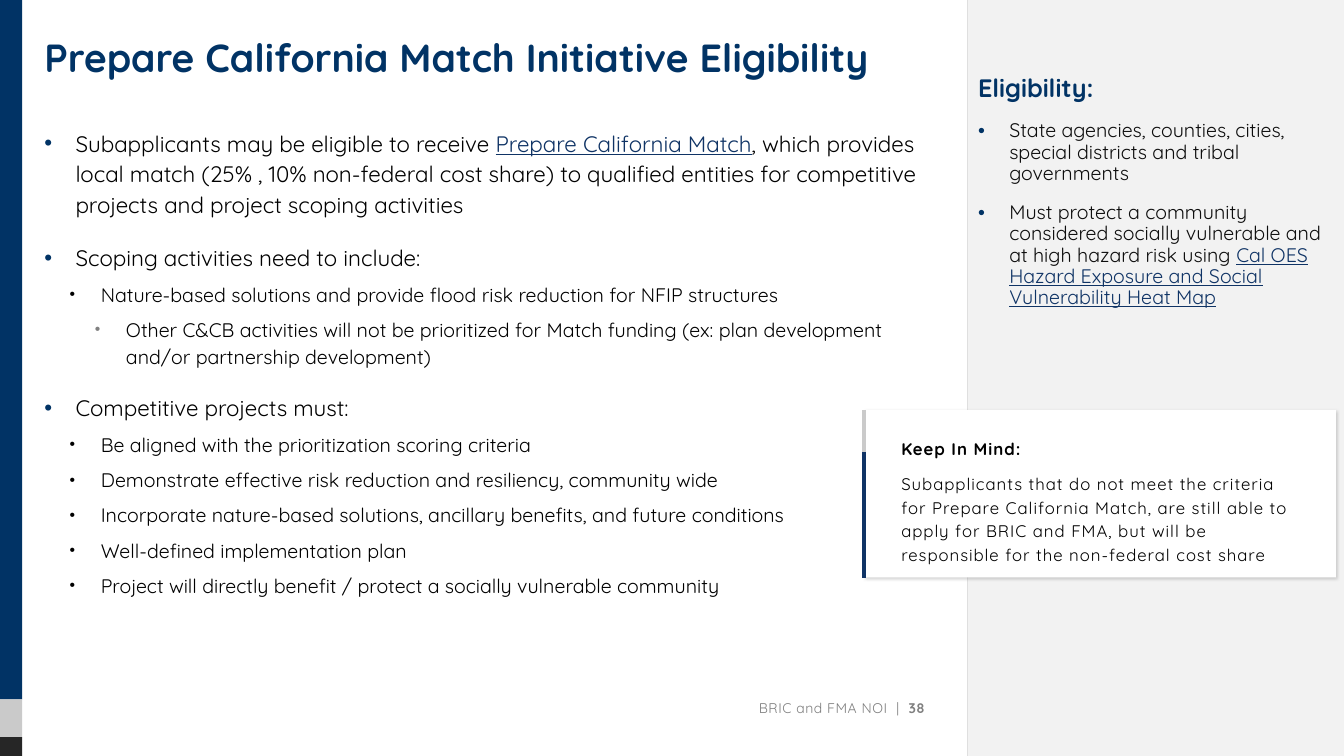
from dataclasses import dataclass

from lxml import etree
from pptx import Presentation
from pptx import util as u
from pptx.dml.color import RGBColor
from pptx.enum import shapes, text
from pptx.oxml import ns


@dataclass(frozen=True)
class Theme:
    font: str = "Quicksand"
    navy: str = "013365"
    link: str = "0F3365"
    silver: str = "CACACA"
    charcoal: str = "262626"
    panel: str = "F2F2F2"
    rule: str = "DFDFDF"
    muted: str = "7F7F7F"
    bullet_muted: str = "808080"
    shadow: str = "595959"
    ink: str = "000000"
    ink_soft: str = "0D0D0D"
    white: str = "FFFFFF"
    title: int = 28
    heading: int = 18
    lead: int = 16
    body: int = 14
    note: int = 12
    footer: int = 10


class SlideBuilder:
    """Draws on one slide; every box is (left, top, width, height) in percent of the slide."""

    def __init__(self, prs, layout, theme):
        self.prs, self.theme = prs, theme
        self.s = prs.slides.add_slide(layout)

    def x(self, share):
        return round(self.prs.slide_width * share / 100)

    def y(self, share):
        return round(self.prs.slide_height * share / 100)

    def box(self, left, top, width, height):
        return self.x(left), self.y(top), self.x(width), self.y(height)

    def rect(self, area, color):
        sp = self.s.shapes.add_shape(shapes.MSO_SHAPE.RECTANGLE, *self.box(*area))
        sp.shadow.inherit = False
        sp.fill.solid()
        sp.fill.fore_color.rgb = RGBColor.from_string(color)
        sp.line.fill.background()
        return sp

    def card(self, area):
        """White rectangle with a soft shadow; returns its text frame."""
        sp = self.rect(area, self.theme.white)
        effects = sp._element.spPr.find(ns.qn("a:effectLst"))
        shadow = etree.SubElement(effects, ns.qn("a:outerShdw"), blurRad=str(u.Pt(2)),
                                  dist=str(u.Pt(1)), dir=str(45 * 60000))
        color = etree.SubElement(shadow, ns.qn("a:srgbClr"), val=self.theme.shadow)
        etree.SubElement(color, ns.qn("a:alpha"), val="25000")
        return self.frame(sp, insets=(0.25, 0.25, 0.35, 0.25))

    def vline(self, x, top, bottom, color, weight):
        line = self.s.shapes.add_connector(shapes.MSO_CONNECTOR.STRAIGHT, self.x(x),
                                           self.y(bottom), self.x(x), self.y(top))
        line.line.color.rgb = RGBColor.from_string(color)
        line.line.width = u.Pt(weight)
        etree.SubElement(line._element.spPr, ns.qn("a:effectLst"))

    def frame(self, sp, insets=(0, 0.05, 0, 0.05), anchor=text.MSO_ANCHOR.TOP):
        tf = sp.text_frame
        tf.word_wrap = True
        tf.auto_size = text.MSO_AUTO_SIZE.NONE
        tf.vertical_anchor = anchor
        tf.margin_left, tf.margin_top, tf.margin_right, tf.margin_bottom = map(u.Inches, insets)
        return tf

    def placeholder(self, index, area):
        """Move a template placeholder in front of what is drawn so far."""
        sp = self.s.placeholders[index]
        sp.left, sp.top, sp.width, sp.height = self.box(*area)
        self.s.shapes._spTree.append(sp._element)
        return self.frame(sp)

    def textbox(self, area):
        sp = self.s.shapes.add_textbox(*self.box(*area))
        return self.frame(sp, anchor=text.MSO_ANCHOR.MIDDLE)

    def para(self, tf, runs, size, color, level=0, bullet=None, bullet_size=100, margin=0,
             spacing=1.0, before=0, after=0, align=text.PP_ALIGN.LEFT, tracking=0):
        """Add a paragraph; runs are (words, kind), kind being "", "bold" or "link"."""
        first = not tf.paragraphs[0].runs
        p = tf.paragraphs[0] if first else tf.add_paragraph()
        p.level = level
        pPr = p._p.get_or_add_pPr()
        pPr.set("marL", str(u.Inches(margin)))
        pPr.set("indent", str(u.Inches(-0.31 if bullet else 0)))
        if bullet:
            clr = etree.SubElement(pPr, ns.qn("a:buClr"))
            etree.SubElement(clr, ns.qn("a:srgbClr"), val=bullet)
            etree.SubElement(pPr, ns.qn("a:buSzPct"), val=str(bullet_size * 1000))
            etree.SubElement(pPr, ns.qn("a:buFont"), typeface="Arial")
            etree.SubElement(pPr, ns.qn("a:buChar"), char="•")
        else:
            etree.SubElement(pPr, ns.qn("a:buNone"))
        p.alignment = align
        p.line_spacing = spacing
        p.space_before = u.Pt(0 if first else before)
        p.space_after = u.Pt(after)
        for words, kind in runs:
            r = p.add_run()
            r.text = words
            r.font.name, r.font.size = self.theme.font, u.Pt(size)
            r.font.bold = kind == "bold"
            r.font.underline = kind == "link"
            r.font.color.rgb = RGBColor.from_string(self.theme.link if kind == "link" else color)
            if tracking:
                r._r.get_or_add_rPr().set("spc", str(round(tracking * 100)))


def main():
    t = Theme()
    prs = Presentation()
    prs.slide_width, prs.slide_height = u.Inches(13.33), u.Inches(7.5)
    b = SlideBuilder(prs, prs.slide_layouts.get_by_name("Two Content"), t)

    side = 72
    b.rect((side, 0, 100 - side, 100), t.panel)
    b.vline(side, 0, 100, t.rule, 1)
    top = 0
    for bottom, color in ((92.5, t.navy), (97.5, t.silver), (100, t.charcoal)):
        b.rect((0, top, 1.65, bottom - top), color)
        top = bottom

    left, width = 3.3, 65.42
    tf = b.placeholder(0, (left, 3.73, width, 11.2))
    b.para(tf, [("Prepare California Match Initiative Eligibility", "bold")], t.title, t.navy)

    tf = b.textbox((28.8, 91.73, 40, 3.87))
    b.para(tf, [("BRIC and FMA NOI  |  ", ""), ("38", "bold")], t.footer, t.muted,
           align=text.PP_ALIGN.RIGHT, tracking=0.4)

    tf = b.placeholder(2, (72.77, 9.33, 26.63, 79.73))
    loose = dict(spacing=0.9, before=10, after=3)
    b.para(tf, [("Eligibility:", "bold")], t.heading, t.navy, **loose)
    for runs in (
        [("State agencies, counties, cities, special districts and tribal governments", "")],
        [("Must protect a community considered socially vulnerable and at high hazard risk using ", ""),
         ("Cal OES Hazard Exposure and Social Vulnerability Heat Map", "link")],
    ):
        b.para(tf, runs, t.body, t.ink_soft, bullet=t.navy, margin=0.31, **loose)

    tf = b.placeholder(1, (left, 16, width, 73.2))
    levels = (
        dict(size=t.lead, bullet=t.navy, before=13),
        dict(size=t.body, bullet=t.ink, bullet_size=80, before=3),
        dict(size=t.body, bullet=t.bullet_muted, bullet_size=80, before=3),
    )
    for level, *runs in (
        (0, ("Subapplicants may be eligible to receive ", ""), ("Prepare California Match", "link"),
         (", which provides local match (25% , 10% non-federal cost share) to qualified entities "
          "for competitive projects and project scoping activities", "")),
        (0, ("Scoping activities need to include:", "")),
        (1, ("Nature-based solutions and provide flood risk reduction for NFIP structures", "")),
        (2, ("Other C&CB activities will not be prioritized for Match funding "
             "(ex: plan development and/or partnership development)", "")),
        (0, ("Competitive projects must:", "")),
        (1, ("Be aligned with the prioritization scoring criteria", "")),
        (1, ("Demonstrate effective risk reduction and resiliency, community wide", "")),
        (1, ("Incorporate nature-based solutions, ancillary benefits, and future conditions", "")),
        (1, ("Well-defined implementation plan", "")),
        (1, ("Project will directly benefit / protect a socially vulnerable community", "")),
    ):
        b.para(tf, runs, color=t.ink, level=level, margin=0.31 + 0.25 * level,
               spacing=1.14, after=3, **levels[level])

    card_left, card_top, card_height = 64.29, 54.27, 22.13
    tf = b.card((card_left, card_top, 35.11, card_height))
    note = dict(size=t.note, color=t.ink, margin=0.12, spacing=1.17, tracking=0.7)
    b.para(tf, [("Keep In Mind:", "bold")], after=2, **note)
    b.para(tf, [("Subapplicants that do not meet the criteria for Prepare California Match, are still "
                 "able to apply for BRIC and FMA, but will be responsible for the non-federal "
                 "cost share", "")], before=6, after=6, **note)
    for share, color in ((1, t.link), (0.25, t.silver)):
        b.vline(card_left, card_top, card_top + card_height * share, color, 3)

    prs.save("out.pptx")


if __name__ == "__main__":
    main()
